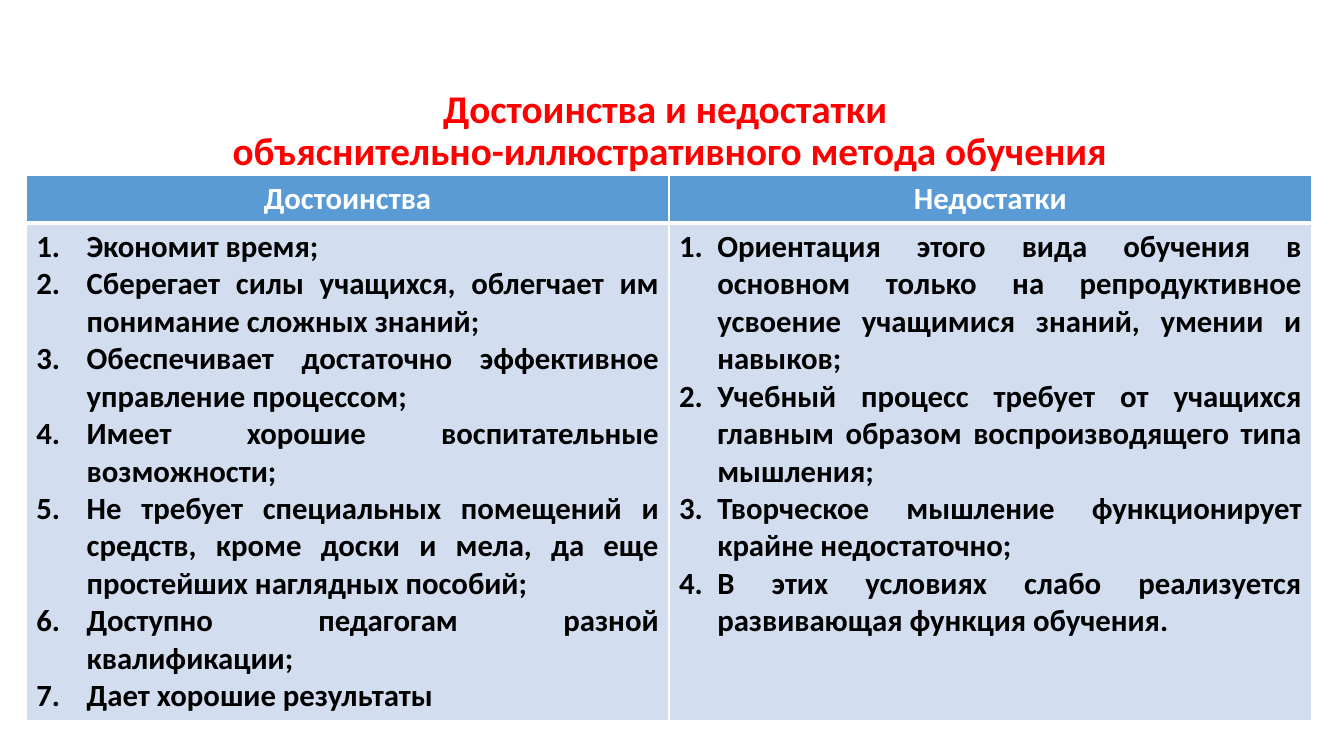
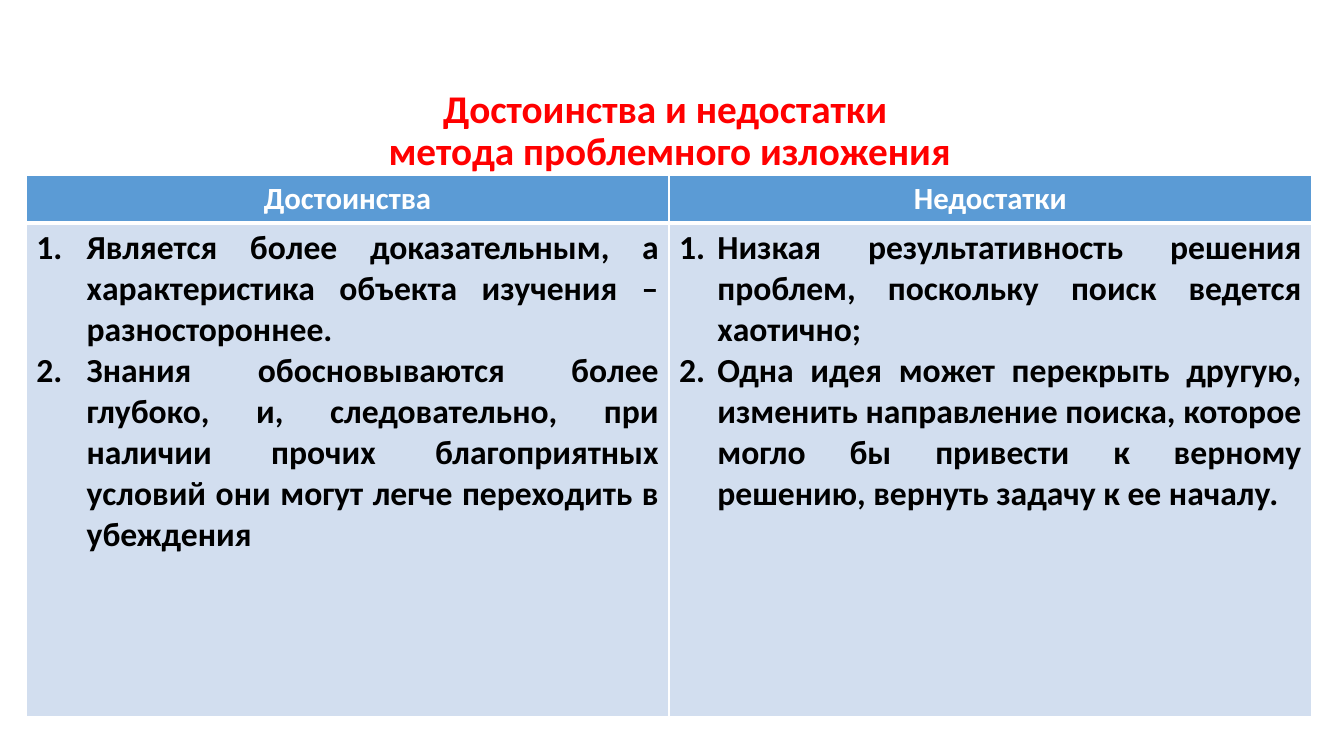
from lxml import etree
from pptx import Presentation
from pptx.dml.color import RGBColor
from pptx.enum.text import MSO_ANCHOR, MSO_AUTO_SIZE, PP_ALIGN
from pptx.oxml.ns import qn
from pptx.util import Inches, Pt

CENTER, JUSTIFY = PP_ALIGN.CENTER, PP_ALIGN.JUSTIFY
MIDDLE = MSO_ANCHOR.MIDDLE
NO_FIT = MSO_AUTO_SIZE.NONE
TITLE_ONLY = 5

RED = RGBColor(0xFF, 0x00, 0x00)
WHITE = RGBColor(0xFF, 0xFF, 0xFF)
BLACK = RGBColor(0x00, 0x00, 0x00)
HEADER_BLUE = RGBColor(0x5B, 0x9B, 0xD5)
BODY_BLUE = RGBColor(0xD2, 0xDE, 0xEF)

FONT = "Calibri"
TITLE_SIZE, HEADER_SIZE = 28, 22
TITLE_BOX = [Inches(v) for v in (0.89, 0.58, 11.5, 1.45)]
TABLE_LEFT, TABLE_TOP, TABLE_WIDTH = 0.26, 1.74, 12.75
ROW_HEIGHTS = (0.47, 4.9)
THIN, THICK = 1, 3

HEADERS = ("Достоинства", "Недостатки")
INDENTS = (0.5, 0.38)  # hanging indent of each column's list

# Title, list size, and one list per column
SLIDES = [
    ("Достоинства и недостатки \vобъяснительно-иллюстративного метода обучения", 22, (
        ["Экономит время;",
         "Сберегает силы учащихся, облегчает им понимание сложных знаний;",
         "Обеспечивает достаточно эффективное управление процессом;",
         "Имеет хорошие воспитательные возможности;",
         "Не требует специальных помещений и средств, кроме доски и мела, "
         "да еще простейших наглядных пособий;",
         "Доступно педагогам разной квалификации;",
         "Дает хорошие результаты"],
        ["Ориентация этого вида обучения в основном только на репродуктивное "
         "усвоение учащимися знаний, умении и навыков;",
         "Учебный процесс требует от учащихся главным образом "
         "воспроизводящего типа мышления;",
         "Творческое мышление функционирует крайне недостаточно;",
         "В этих условиях слабо реализуется развивающая функция обучения."])),
    ("Достоинства и недостатки \vметода проблемного изложения", 24, (
        ["Является более доказательным, а характеристика объекта изучения – "
         "разностороннее.",
         "Знания обосновываются более глубоко, и, следовательно, при наличии "
         "прочих благоприятных условий они могут легче переходить в убеждения"],
        ["Низкая результативность решения проблем, поскольку поиск ведется "
         "хаотично;",
         "Одна идея может перекрыть другую, изменить направление поиска, "
         "которое могло бы привести к верному решению, вернуть задачу к ее "
         "началу."])),
]


def format_runs(p, size, color):
    for r in p.runs:
        for name, value in {"name": FONT, "size": Pt(size), "bold": True}.items():
            setattr(r.font, name, value)
        r.font.color.rgb = color


def set_title(s, text):
    title = s.shapes.title
    title.left, title.top, title.width, title.height = TITLE_BOX
    tf = title.text_frame
    tf.text = text
    tf.auto_size, tf.vertical_anchor, tf.word_wrap = NO_FIT, MIDDLE, True
    p = tf.paragraphs[0]
    p.alignment, p.line_spacing = CENTER, 0.9
    format_runs(p, TITLE_SIZE, RED)
    # The line break has the size of the text around it
    for br in p._p.findall(qn("a:br")):
        etree.SubElement(br, qn("a:rPr"), sz=str(TITLE_SIZE * 100))


def number_paragraph(p, indent):
    pPr = p._p.get_or_add_pPr()
    pPr.set("marL", str(Inches(indent)))
    pPr.set("indent", str(-Inches(indent)))
    etree.SubElement(pPr, qn("a:buFont"), typeface="+mj-lt")
    etree.SubElement(pPr, qn("a:buAutoNum"), type="arabicPeriod")


def style_cell(cell, fill, top, bottom):
    cell.fill.solid()
    cell.fill.fore_color.rgb = fill
    tcPr = cell._tc.get_or_add_tcPr()
    # Borders come before the fill
    edges = {"a:lnL": THIN, "a:lnR": THIN, "a:lnT": top, "a:lnB": bottom}
    for i, (tag, width) in enumerate(edges.items()):
        ln = etree.Element(qn(tag), w=str(Pt(width)))
        solid = etree.SubElement(ln, qn("a:solidFill"))
        etree.SubElement(solid, qn("a:srgbClr"), val=str(WHITE))
        tcPr.insert(i, ln)


def fill_header(cell, text):
    style_cell(cell, HEADER_BLUE, THIN, THICK)
    cell.text = text
    p = cell.text_frame.paragraphs[0]
    p.alignment = CENTER
    format_runs(p, HEADER_SIZE, WHITE)


def fill_list(cell, items, indent, size):
    style_cell(cell, BODY_BLUE, THICK, THIN)
    cell.text = "\n".join(items)
    for p in cell.text_frame.paragraphs:
        p.alignment = JUSTIFY
        number_paragraph(p, indent)
        format_runs(p, size, BLACK)


def add_comparison(s, columns, size):
    table = s.shapes.add_table(
        len(ROW_HEIGHTS), len(HEADERS), Inches(TABLE_LEFT), Inches(TABLE_TOP),
        Inches(TABLE_WIDTH), Inches(sum(ROW_HEIGHTS))).table
    table.horz_banding = False
    for row, height in zip(table.rows, ROW_HEIGHTS):
        row.height = Inches(height)
    for col, (header, items, indent) in enumerate(zip(HEADERS, columns, INDENTS)):
        fill_header(table.cell(0, col), header)
        fill_list(table.cell(1, col), items, indent, size)


def main():
    prs = Presentation()
    prs.slide_width, prs.slide_height = Inches(13.33), Inches(7.5)
    for title, size, columns in SLIDES:
        s = prs.slides.add_slide(prs.slide_layouts[TITLE_ONLY])
        set_title(s, title)
        add_comparison(s, columns, size)
    prs.save("out.pptx")


if __name__ == "__main__":
    main()
